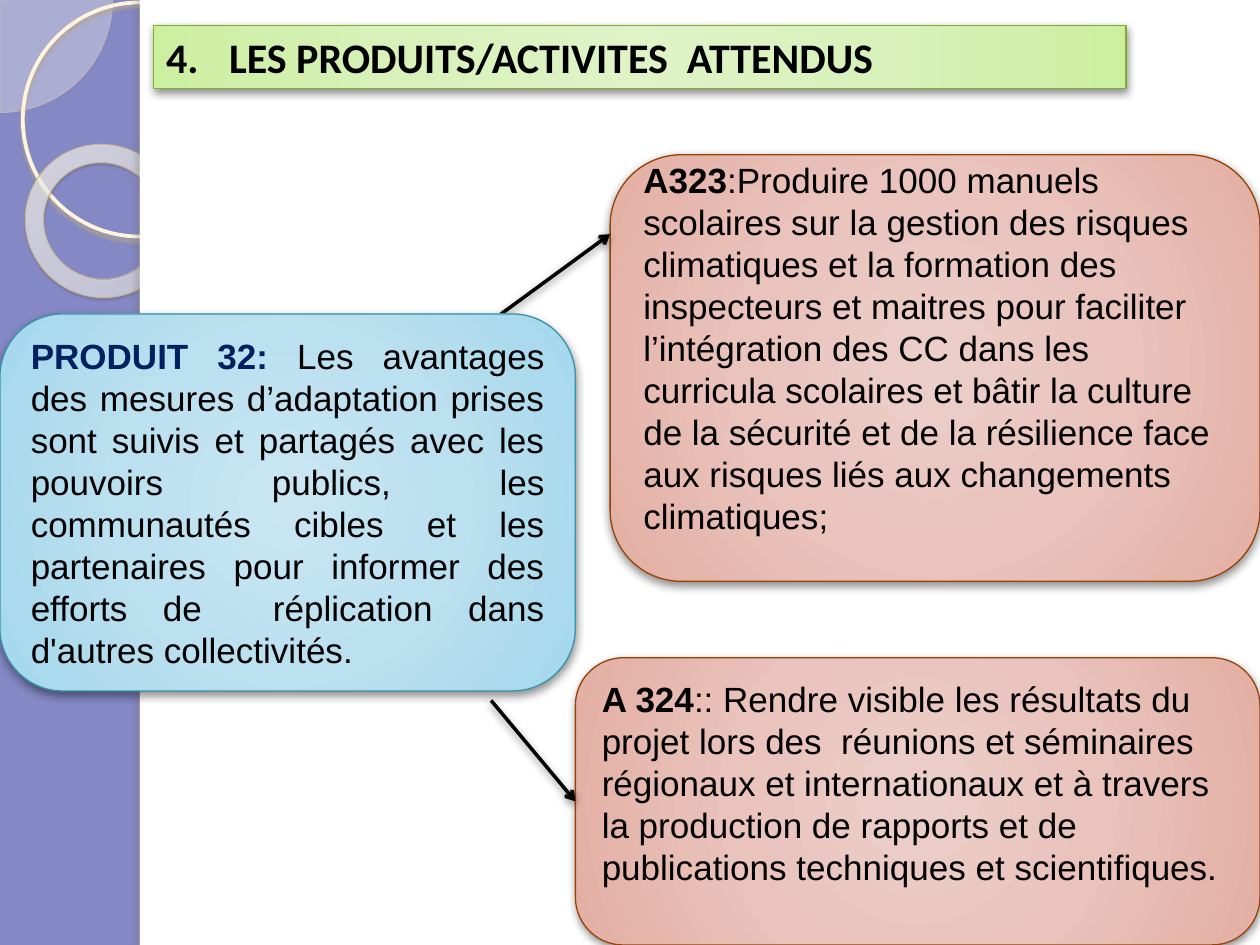
from lxml.etree import SubElement
from pptx import Presentation
from pptx.dml.color import RGBColor
from pptx.enum.shapes import MSO_CONNECTOR, MSO_SHAPE
from pptx.enum.text import MSO_ANCHOR, PP_ALIGN
from pptx.oxml.ns import qn
from pptx.util import Cm, Pt

SOFT_SHADOW = ("000000", 43, 5, 2, 90)
CENTRE = (50, 50, 50, 50)
ROSE = [(0, "ECCEC9", 100), (50, "E9C3BC", 100), (97, "E4AFA4", 100), (100, "E4A89B", 100)]
SKY = [(0, "C9E6F2", 100), (50, "BBE0EF", 100), (97, "A4D8ED", 100), (100, "9BD7EE", 100)]
LIME = [(0, "DFF3C7", 100), (50, "D8F1BA", 100), (97, "CDEFA2", 100), (100, "CAF199", 100)]
PEARL = [(0, "FFFCF6", 70), (70, "FFFEFB", 55), (100, "F0D28E", 60)]


def rgb(value):
    return RGBColor.from_string(value)


def apply_format(target, values):
    for name, value in values.items():
        setattr(target, name, value)


def add_node(parent, tag, **attributes):
    return SubElement(parent, qn(tag), {key: str(value) for key, value in attributes.items()})


def add_colour(parent, colour, opacity):
    node = add_node(parent, "a:srgbClr", val=colour)
    if opacity < 100:
        add_node(node, "a:alpha", val=opacity * 1000)


def add_shadow(effects, colour, opacity, blur, distance, angle):
    outer = add_node(effects, "a:outerShdw", blurRad=Pt(blur), dist=Pt(distance),
                     dir=angle * 60000, rotWithShape=0)
    add_colour(outer, colour, opacity)


def fill_radial(shape, stops, focus):
    shape.fill.gradient()
    gradient = shape.element.spPr.find(qn("a:gradFill"))
    for child in list(gradient):
        gradient.remove(child)
    stop_list = add_node(gradient, "a:gsLst")
    for position, colour, opacity in stops:
        add_colour(add_node(stop_list, "a:gs", pos=position * 1000), colour, opacity)
    radial = add_node(gradient, "a:path", path="circle")
    edges = {side: value * 1000 for side, value in zip("ltrb", focus)}
    add_node(radial, "a:fillToRect", **edges)


def add_figure(slide, kind, box, fill=None, opacity=100, focus=CENTRE, line=None, shadow=None):
    figure = slide.shapes.add_shape(kind, *map(Cm, box))
    figure.shadow.inherit = False
    if isinstance(fill, list):
        fill_radial(figure, fill, focus)
    elif fill:
        figure.fill.solid()
        figure.fill.fore_color.rgb = rgb(fill)
        if opacity < 100:
            colour = figure.element.spPr.find(qn("a:solidFill"))[0]
            add_node(colour, "a:alpha", val=opacity * 1000)
    else:
        figure.fill.background()
    if line:
        figure.line.color.rgb = rgb(line[0])
        figure.line.width = Pt(line[1])
    else:
        figure.line.fill.background()
    if shadow:
        add_shadow(figure.element.spPr.find(qn("a:effectLst")), *shadow)
    return figure


def add_run(paragraph, text, name, size, colour, bold):
    run = paragraph.add_run()
    run.text = text
    apply_format(run.font, {"name": name, "size": Pt(size), "bold": bold})
    run.font.color.rgb = rgb(colour)


def draw_side_band(slide, box):
    left, top, width, height = box
    pie = add_figure(slide, MSO_SHAPE.PIE, (left - 2.27, top - 2.27, 4.54, 4.54),
                     "FEFAF4", 33, line=("D3C39F", 0.25))
    pie.adjustments[0] = 0
    pie.adjustments[1] = 54
    add_figure(slide, MSO_SHAPE.OVAL, (left + 0.46, top + 0.05, 4.72, 4.72),
               line=("FFF5DE", 2.15), shadow=("B0A68F", 85, 2, 2, 90))
    ring = add_figure(slide, MSO_SHAPE.DONUT, (left + 0.5, top + 2.92, 3.12, 3.07), PEARL,
                      focus=(-408, -50, 508, 150), line=("C7B893", 0.58),
                      shadow=("5A5444", 35, 1, 1.2, 75))
    ring.adjustments[0] = 0.12
    ring.rotation = 38.6


def draw_page(slide, box):
    left, top, _, height = box
    add_figure(slide, MSO_SHAPE.RECTANGLE, box, "FFFFFF")
    add_figure(slide, MSO_SHAPE.RECTANGLE, (left, top, 0.2, height), "FFFFFF",
               shadow=("736F63", 25, 3, 3, 180))


def draw_title(slide, box, title, number):
    banner = add_figure(slide, MSO_SHAPE.RECTANGLE, box, LIME, line=("84AA33", 0.75),
                        shadow=SOFT_SHADOW)
    apply_format(banner.text_frame, {"word_wrap": True, "vertical_anchor": MSO_ANCHOR.TOP})
    heading = banner.text_frame.paragraphs[0]
    heading.alignment = PP_ALIGN.LEFT
    properties = heading._p.get_or_add_pPr()
    properties.set("marL", str(Cm(1.27)))
    properties.set("indent", str(-Cm(1.27)))
    add_node(properties, "a:buAutoNum", type="arabicPeriod", startAt=number)
    add_run(heading, title, "Calibri", 24, "000000", True)


def draw_card(slide, box, fill, line, label, label_colour, body, alignment, bottom):
    card = add_figure(slide, MSO_SHAPE.ROUNDED_RECTANGLE, box, fill, line=(line, 0.75),
                      shadow=SOFT_SHADOW)
    apply_format(card.text_frame, {"word_wrap": True, "vertical_anchor": MSO_ANCHOR.MIDDLE,
                                   "margin_bottom": Cm(bottom)})
    statement = card.text_frame.paragraphs[0]
    statement.alignment = alignment
    add_run(statement, label, "Arial", 20, label_colour, True)
    add_run(statement, body, "Arial", 20, "000000", False)
    return card


def draw_arrow(slide, start, end):
    arrow = slide.shapes.add_connector(MSO_CONNECTOR.STRAIGHT, *map(Cm, start + end))
    arrow.line.color.rgb = rgb("000000")
    arrow.line.width = Pt(2)
    properties = arrow.element.spPr
    add_node(properties.find(qn("a:ln")), "a:tailEnd", type="arrow")
    add_shadow(add_node(properties, "a:effectLst"), *SOFT_SHADOW)
    return arrow


def main():
    deck = Presentation()
    apply_format(deck, {"slide_width": Cm(25.4), "slide_height": Cm(19.05)})
    slide = deck.slides.add_slide(deck.slide_layouts[6])
    slide.background.fill.solid()
    slide.background.fill.fore_color.rgb = rgb("8488C4")

    draw_side_band(slide, (0, 0, 2.82, 19.05))
    draw_page(slide, (2.82, 0, 22.58, 19.05))
    draw_card(slide, (12.3, 3.12, 13.1, 8.6), ROSE, "964305", "A323", "000000",
              ":Produire 1000 manuels scolaires sur la gestion des risques climatiques et la "
              "formation des inspecteurs et maitres pour faciliter l’intégration des CC dans les "
              "curricula scolaires et bâtir la culture de la sécurité et de la résilience face "
              "aux risques liés aux changements climatiques;", PP_ALIGN.LEFT, 0.97)
    visibility = draw_card(
        slide, (11.6, 13.26, 13.8, 5.79), ROSE, "964305", "A 324", "000000",
        ":: Rendre visible les résultats du projet lors des  réunions et séminaires régionaux et "
        "internationaux et à travers la production de rapports et de publications techniques et "
        "scientifiques.", PP_ALIGN.LEFT, 0.89)
    draw_arrow(slide, (10.1, 6.33), (12.3, 4.72))
    draw_card(slide, (0, 6.33, 11.6, 7.6), SKY, "3891A7", "PRODUIT 32: ", "002060",
              "Les avantages des mesures d’adaptation prises sont suivis et partagés avec les "
              "pouvoirs publics, les communautés cibles et les partenaires pour informer des "
              "efforts de  réplication dans d'autres collectivités.", PP_ALIGN.JUSTIFY, 0.13)
    draw_arrow(slide, (9.9, 14.12), (11.6, 16.16)).end_connect(visibility, 1)
    draw_title(slide, (3.1, 0.52, 19.6, 1.27), "LES PRODUITS/ACTIVITES  ATTENDUS", 4)
    deck.save("out.pptx")


if __name__ == "__main__":
    main()
